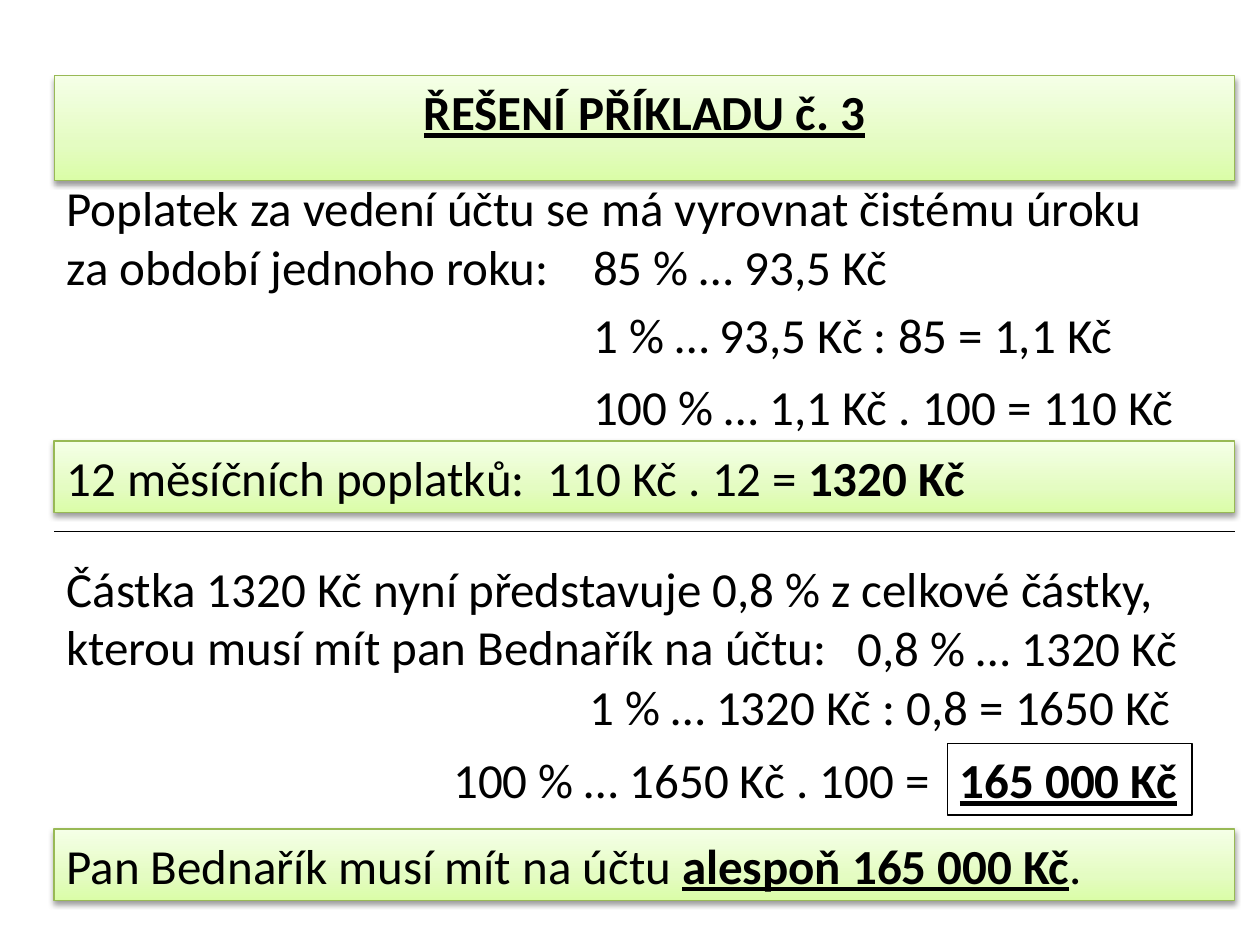
from copy import deepcopy

from lxml import etree
from pptx import Presentation
from pptx.dml.color import RGBColor
from pptx.enum.shapes import MSO_CONNECTOR, MSO_SHAPE
from pptx.enum.text import MSO_ANCHOR, MSO_AUTO_SIZE, PP_ALIGN
from pptx.oxml import parse_xml
from pptx.util import Inches, Pt

BLACK = RGBColor(0x00, 0x00, 0x00)
BORDER_GREEN = RGBColor(0x98, 0xB9, 0x55)
GRADIENT = [
    (0, RGBColor(0xDA, 0xFD, 0xA7)),
    (0.35, RGBColor(0xE4, 0xFC, 0xC2)),
    (1, RGBColor(0xF5, 0xFF, 0xE7)),
]
DRAWING_NS = "http://schemas.openxmlformats.org/drawingml/2006/main"
SHADOW_XML = (
    f'<a:effectLst xmlns:a="{DRAWING_NS}">'
    '<a:outerShdw blurRad="40000" dist="20000" dir="5400000" rotWithShape="0">'
    '<a:srgbClr val="000000"><a:alpha val="38000"/></a:srgbClr>'
    "</a:outerShdw></a:effectLst>"
)

# Content: a line is a list of (text, style), style being "", "b" or "bu"
TITLE = (0.6, [("ŘEŠENÍ PŘÍKLADU č. 3", "bu")])
BANDS = [  # top, line
    (3.5, [("12 měsíčních poplatků:  110 Kč . 12 = ", ""), ("1320 Kč", "b")]),
    (6.58, [("Pan Bednařík musí mít na účtu ", ""),
            ("alespoň 165 000 Kč", "bu"), (".", "")]),
]
STATEMENTS = [  # top, lines
    (1.36, ["Poplatek za vedení účtu se má vyrovnat čistému úroku",
            "za období jednoho roku:"]),
    (4.38, ["Částka 1320 Kč nyní představuje 0,8 % z celkové částky,",
            "kterou musí mít pan Bednařík na účtu:"]),
]
CALCULATIONS = [  # left, top, width, text
    (4.61, 1.83, 2.57, "85 % … 93,5 Kč"),
    (4.61, 2.37, 4.38, "1 % … 93,5 Kč : 85 = 1,1 Kč"),
    (4.61, 2.94, 4.97, "100 % … 1,1 Kč . 100 = 110 Kč"),
    (6.71, 4.85, 2.77, "0,8 % … 1320 Kč"),
    (4.58, 5.32, 4.88, "1 % … 1320 Kč : 0,8 = 1650 Kč"),
    (3.5, 5.9, 4.13, "100 % … 1650 Kč . 100 ="),
]
RESULT = (7.52, 5.9, 1.94, "165 000 Kč")

# Layout
LEFT, WIDTH = 0.43, 9.37
LINE_HEIGHT, TWO_LINE_HEIGHT = 0.57, 1.04
RULE_TOP = 4.22


def write_lines(shape, lines, wrap=True, align=PP_ALIGN.LEFT):
    frame = shape.text_frame
    frame.word_wrap = wrap
    frame.auto_size = MSO_AUTO_SIZE.SHAPE_TO_FIT_TEXT
    frame.vertical_anchor = MSO_ANCHOR.TOP
    for index, line in enumerate(lines):
        paragraph = frame.add_paragraph() if index else frame.paragraphs[0]
        paragraph.alignment = align
        paragraph.font.name = "Calibri"
        paragraph.font.size = Pt(28)
        paragraph.font.color.rgb = BLACK
        for text, style in line:
            run = paragraph.add_run()
            run.text = text
            run.font.bold = "b" in style
            run.font.underline = "u" in style


def add_text(left, top, width, height, lines, wrap):
    box = slide.shapes.add_textbox(
        Inches(left), Inches(top), Inches(width), Inches(height))
    write_lines(box, [[(line, "")] for line in lines], wrap)


def style_band(shape):
    shape.fill.gradient()
    shape.fill.gradient_angle = 90  # counter-clockwise: first stop at the bottom
    stops = shape.fill.gradient_stops
    first_stop = shape._element.spPr.find(f".//{{{DRAWING_NS}}}gs")
    first_stop.addnext(deepcopy(first_stop))
    stops = shape.fill.gradient_stops
    for stop, (position, color) in zip(stops, GRADIENT):
        stop.position = position
        stop.color.rgb = color
    shape.line.color.rgb = BORDER_GREEN
    shape.line.width = Pt(0.75)
    shape._element.spPr.append(parse_xml(SHADOW_XML))


def add_rectangle(left, top, width):
    return slide.shapes.add_shape(
        MSO_SHAPE.RECTANGLE, Inches(left), Inches(top),
        Inches(width), Inches(LINE_HEIGHT))


presentation = Presentation()
presentation.slide_width = Inches(10)
presentation.slide_height = Inches(7.5)
slide = presentation.slides.add_slide(presentation.slide_layouts[5])

# Title band
title_top, title_line = TITLE
title = slide.shapes.title
title.left, title.top = Inches(LEFT), Inches(title_top)
title.width, title.height = Inches(WIDTH), Inches(LINE_HEIGHT)
style_band(title)
write_lines(title, [title_line], align=PP_ALIGN.CENTER)

# Statements and calculations
for top, lines in STATEMENTS:
    add_text(LEFT, top, WIDTH, TWO_LINE_HEIGHT, lines, wrap=True)
for left, top, width, text in CALCULATIONS:
    add_text(left, top, width, LINE_HEIGHT, [text], wrap=False)

# Answer bands
for top, line in BANDS:
    band = add_rectangle(LEFT, top, WIDTH)
    style_band(band)
    write_lines(band, [line])

# Framed result
left, top, width, text = RESULT
result = add_rectangle(left, top, width)
result.shadow.inherit = False
result.fill.background()
result.line.color.rgb = BLACK
result.line.width = Pt(0.75)
write_lines(result, [[(text, "bu")]], wrap=False)

# Rule between the two steps
rule = slide.shapes.add_connector(
    MSO_CONNECTOR.STRAIGHT, Inches(LEFT), Inches(RULE_TOP),
    Inches(LEFT + WIDTH), Inches(RULE_TOP))
rule.line.color.rgb = BLACK
rule.line.width = Pt(0.75)
etree.SubElement(rule._element.spPr, f"{{{DRAWING_NS}}}effectLst")

presentation.save("out.pptx")
